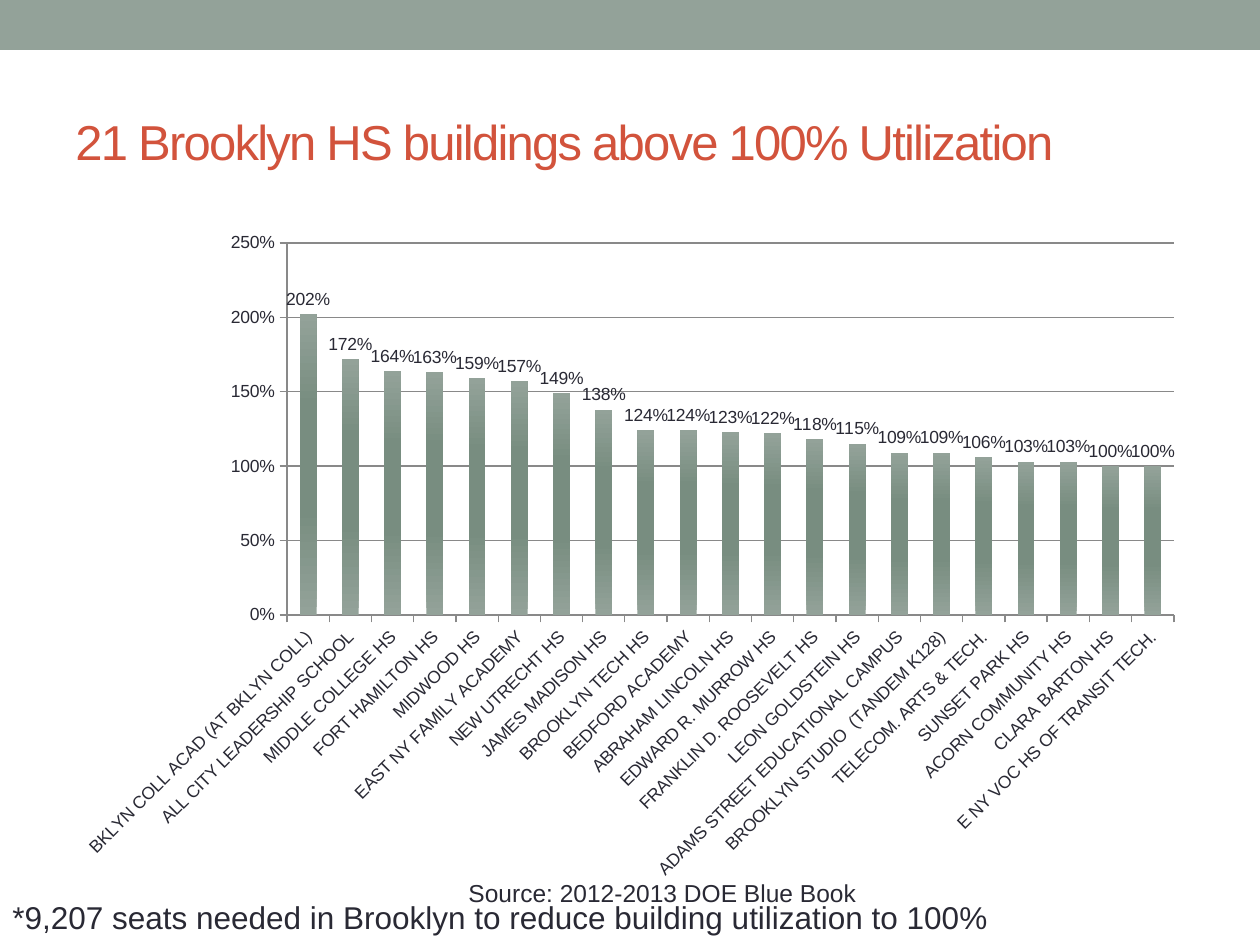
from dataclasses import dataclass

from lxml import etree
from pptx import Presentation
from pptx import util as u
from pptx.chart import data as cd
from pptx.dml.color import RGBColor as Rgb
from pptx.enum import chart as ce, shapes, text
from pptx.oxml import parse_xml
from pptx.oxml.ns import nsdecls, qn

SCALE = 914400 / 126


@dataclass(frozen=True)
class Theme:
    face: str = "Arial"
    ink: str = "292934"
    accent: str = "D2533C"
    sage: str = "93A299"
    moss: str = "788D80"
    rule: str = "898989"
    title: int = 28
    note: int = 18
    source: int = 14
    label: int = 10


@dataclass(frozen=True)
class Box:
    x: int
    y: int
    w: int
    h: int

    def emu(self) -> list[u.Emu]:
        return [px(n) for n in (self.x, self.y, self.w, self.h)]


@dataclass(frozen=True)
class Label:
    box: Box
    words: str
    size: int
    color: str
    align: text.PP_ALIGN = text.PP_ALIGN.LEFT
    anchor: text.MSO_ANCHOR = text.MSO_ANCHOR.TOP
    wrap: bool = True
    track: int = 0


@dataclass(frozen=True)
class School:
    name: str
    rate: float


THEME = Theme()
BAND = Box(0, 0, 1260, 50)
FRAME = Box(63, 220, 1134, 672)
PLOT = Box(287, 243, 887, 372)

LABELS = [
    Label(Box(63, 73, 1134, 136), "21 Brooklyn HS buildings above 100% Utilization",
          THEME.title, THEME.accent, anchor=text.MSO_ANCHOR.MIDDLE, track=-100),
    Label(Box(0, 892, 1017, 50),
          "*9,207 seats needed in Brooklyn to reduce building utilization to 100%",
          THEME.note, THEME.ink, wrap=False),
    Label(Box(65, 872, 1195, 43), "Source: 2012-2013 DOE Blue Book",
          THEME.source, THEME.ink, align=text.PP_ALIGN.CENTER),
]

SCHOOLS = [
    School("BKLYN COLL ACAD (AT BKLYN COLL)", 2.02),
    School("ALL CITY LEADERSHIP SCHOOL", 1.72),
    School("MIDDLE COLLEGE HS", 1.64),
    School("FORT HAMILTON HS", 1.63),
    School("MIDWOOD HS", 1.59),
    School("EAST NY FAMILY ACADEMY", 1.57),
    School("NEW UTRECHT HS", 1.49),
    School("JAMES MADISON HS", 1.38),
    School("BROOKLYN TECH HS", 1.24),
    School("BEDFORD ACADEMY", 1.24),
    School("ABRAHAM LINCOLN HS", 1.23),
    School("EDWARD R. MURROW HS", 1.22),
    School("FRANKLIN D. ROOSEVELT HS", 1.18),
    School("LEON GOLDSTEIN HS", 1.15),
    School("ADAMS STREET EDUCATIONAL CAMPUS", 1.09),
    School("BROOKLYN STUDIO  (TANDEM K128)", 1.09),
    School("TELECOM. ARTS & TECH.", 1.06),
    School("SUNSET PARK HS", 1.03),
    School("ACORN COMMUNITY HS", 1.03),
    School("CLARA BARTON HS", 1),
    School("E NY VOC HS OF TRANSIT TECH.", 1),
]


def px(n: int) -> u.Emu:
    return u.Emu(round(n * SCALE))


def style(font, size: int, color: str) -> None:
    font.name = THEME.face
    font.size = u.Pt(size)
    font.color.rgb = Rgb.from_string(color)


def draw_band(slide, box: Box) -> None:
    band = slide.shapes.add_shape(shapes.MSO_SHAPE.RECTANGLE, *box.emu())
    band.shadow.inherit = False
    band.fill.solid()
    band.fill.fore_color.rgb = Rgb.from_string(THEME.sage)
    band.line.fill.background()


def draw_label(slide, label: Label) -> None:
    frame = slide.shapes.add_textbox(*label.box.emu()).text_frame
    frame.word_wrap = label.wrap
    frame.vertical_anchor = label.anchor
    para = frame.paragraphs[0]
    para.alignment = label.align
    style(para.font, label.size, label.color)
    run = para.add_run()
    run.text = label.words
    if label.track:
        run.font._element.set("spc", str(label.track))


def place_plot(chart, frame: Box, plot: Box) -> None:
    area = chart._chartSpace.chart.plotArea
    for old in area.findall(qn("c:layout")):
        area.remove(old)
    layout = parse_xml(f"<c:layout {nsdecls('c')}><c:manualLayout/></c:layout>")
    parts = {
        "layoutTarget": "inner", "xMode": "edge", "yMode": "edge",
        "x": round((plot.x - frame.x) / frame.w, 4),
        "y": round((plot.y - frame.y) / frame.h, 4),
        "w": round(plot.w / frame.w, 4),
        "h": round(plot.h / frame.h, 4),
    }
    for tag, val in parts.items():
        etree.SubElement(layout[0], qn(f"c:{tag}")).set("val", str(val))
    area.insert(0, layout)


def shade_bars(series) -> None:
    fill = series.format.fill
    fill.gradient()
    fill.gradient_angle = 90
    stops = series._element.find(".//" + qn("a:gsLst"))
    for old in list(stops):
        stops.remove(old)
    for pos, color in ((0, THEME.sage), (35, THEME.moss), (70, THEME.moss), (100, THEME.sage)):
        stop = etree.SubElement(stops, qn("a:gs"), pos=str(pos * 1000))
        etree.SubElement(stop, qn("a:srgbClr"), val=color)


def draw_chart(slide, schools: list[School]) -> None:
    data = cd.CategoryChartData(number_format="0%")
    data.categories = [s.name for s in schools]
    data.add_series("Series 1", [s.rate for s in schools])
    chart = slide.shapes.add_chart(
        ce.XL_CHART_TYPE.COLUMN_CLUSTERED, *FRAME.emu(), data).chart
    chart.has_legend = False
    chart.has_title = False
    style(chart.font, THEME.label, THEME.ink)
    place_plot(chart, FRAME, PLOT)

    cats, vals = chart.category_axis, chart.value_axis
    vals.minimum_scale, vals.maximum_scale, vals.major_unit = 0, 2.5, 0.5
    vals.has_major_gridlines = True
    for axis in (cats, vals):
        axis.major_tick_mark = ce.XL_TICK_MARK.OUTSIDE
        style(axis.tick_labels.font, THEME.label, THEME.ink)
    for item in (cats, vals, vals.major_gridlines):
        item.format.line.color.rgb = Rgb.from_string(THEME.rule)
        item.format.line.width = u.Pt(0.75)
    vals.tick_labels.number_format = "0%"
    vals.tick_labels.number_format_is_linked = False
    cats._element.find(".//" + qn("a:bodyPr")).set("rot", str(-45 * 60000))

    plot = chart.plots[0]
    plot.gap_width = 150
    plot.vary_by_categories = False
    plot.has_data_labels = True
    tags = plot.data_labels
    tags.show_value = True
    tags.number_format = "0%"
    tags.number_format_is_linked = False
    tags.position = ce.XL_LABEL_POSITION.OUTSIDE_END
    style(tags.font, THEME.label, THEME.ink)
    shade_bars(plot.series[0])


def main() -> None:
    deck = Presentation()
    deck.slide_width, deck.slide_height = px(1260), px(945)
    slide = deck.slides.add_slide(deck.slide_layouts[6])
    draw_band(slide, BAND)
    draw_chart(slide, SCHOOLS)
    for label in LABELS:
        draw_label(slide, label)
    deck.save("out.pptx")


if __name__ == "__main__":
    main()
